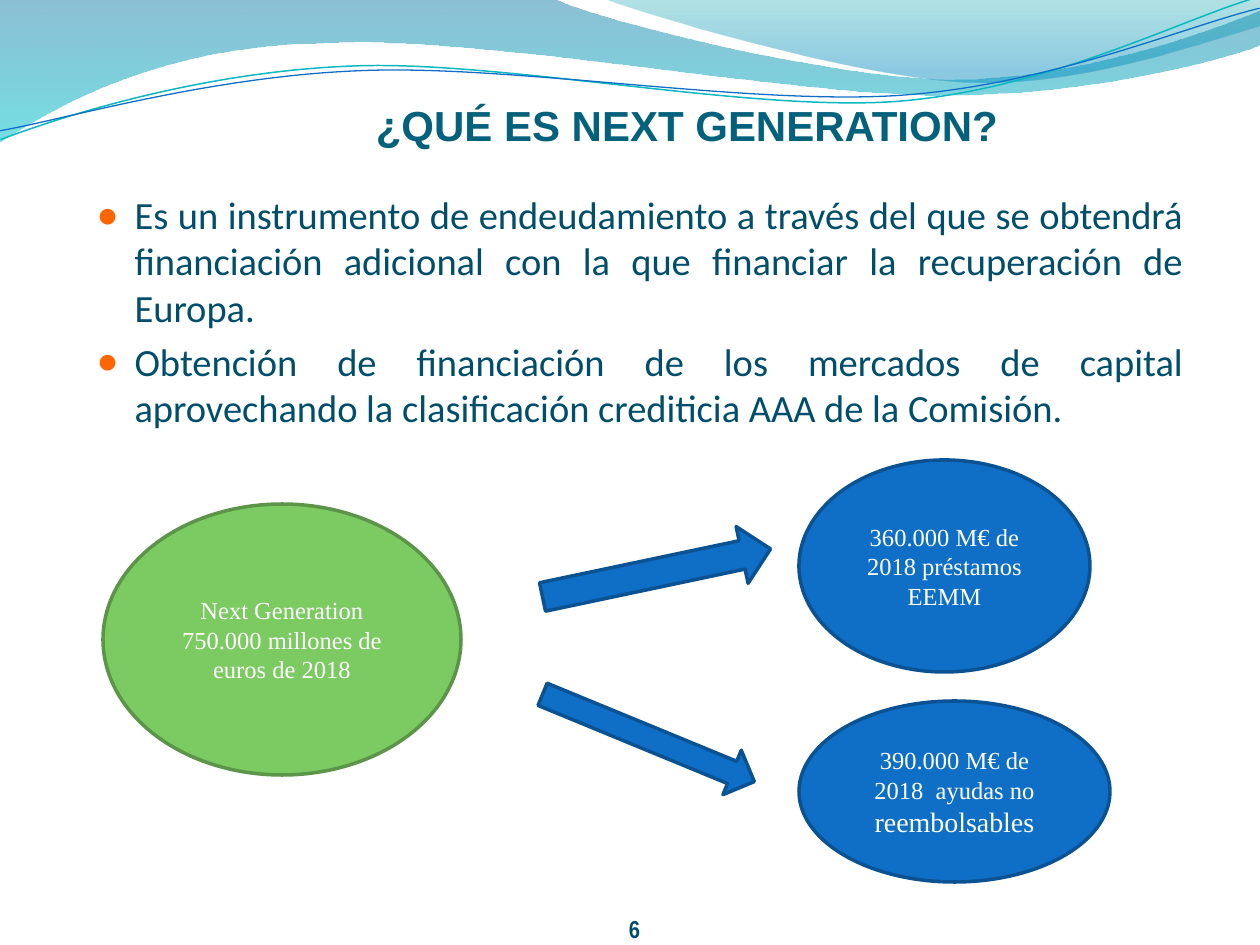
from lxml.etree import SubElement
from pptx import Presentation
from pptx.dml.color import RGBColor
from pptx.enum.shapes import MSO_SHAPE as Shape
from pptx.enum.text import MSO_ANCHOR as Anchor, MSO_AUTO_SIZE as AutoSize, PP_ALIGN as Align
from pptx.oxml.ns import qn
from pptx.util import Pt

EMU_PER_PX = 914400 / 126
COLORS = {
    "title": "04617B", "text": "004E6C", "bullet": "FF6600", "white": "FFFFFF",
    "green": "7CCA62", "green_line": "5C9549",
    "blue": "0F6FC6", "blue_line": "0B5292", "teal_line": "0AB8BF",
    "wave_top": "0074A1", "wave_bottom": "00C6CF",
    "crest_top": "00A1A9", "crest_bottom": "008BBF",
}


def px(*values):
    return [round(value * EMU_PER_PX) for value in values]


def style_runs(paragraph, font_name, size, color, bold=False):
    for run in paragraph.runs:
        run.font.name = font_name
        run.font.size = Pt(size)
        run.font.bold = bold
        run.font.color.rgb = RGBColor.from_string(COLORS[color])


presentation = Presentation()
presentation.slide_width, presentation.slide_height = px(1260, 945)
slide = presentation.slides.add_slide(presentation.slide_layouts[1])
shapes = slide.shapes
title, body = slide.placeholders

waves = [
    ((0, 0), [
        [(554, -1)],
        [(600, 21), (837, 79), (955, 79)],
        [(1074, 79), (1207, 33), (1260, 11)],
        [(1261, 45)],
        [(1239, 55), (1096, 96), (940, 95)],
        [(784, 95), (481, 35), (324, 43)],
        [(163, 45), (58, 105), (-1, 142)],
        [(0, 0)],
    ], [("wave_top", 0, 45), ("wave_bottom", 1, 55)], None),
    ((604, -1), [
        [(641, 14), (859, 78), (969, 82)],
        [(1079, 87), (1211, 40), (1260, 26)],
        [(1260, 0)],
        [(604, -1)],
    ], [("crest_top", 0, 30), ("crest_bottom", 0.8, 45)], None),
    ((-2, 110), [
        [(59, 90), (200, 52), (350, 53)],
        [(499, 53), (745, 118), (896, 114)],
        [(1048, 109), (1184, 45), (1260, 27)],
    ], None, ("teal_line", 0.85)),
    ((-2, 101), [
        [(57, 94), (207, 57), (358, 58)],
        [(509, 58), (750, 112), (902, 108)],
        [(1052, 104), (1188, 52), (1262, 38)],
    ], None, ("blue", 0.75)),
]
for start, segments, gradient, outline in waves:
    builder = shapes.build_freeform(*px(*start))
    builder.add_line_segments(
        [px(*point) for segment in segments for point in segment], close=gradient is not None)
    wave = builder.convert_to_shape()
    wave.shadow.inherit = False
    edges = iter(list(wave._element.iter(qn("a:lnTo"))))
    for segment in segments:
        edge = next(edges)
        if len(segment) == 3:
            edge.tag = qn("a:cubicBezTo")
            for extra in (next(edges), next(edges)):
                edge.append(extra[0])
                extra.getparent().remove(extra)
    if gradient:
        wave.line.fill.background()
        wave.fill.gradient()
        wave.fill.gradient_angle = 270
        for stop, (color, position, opacity) in zip(wave.fill.gradient_stops, gradient):
            stop.position = position
            stop.color.rgb = RGBColor.from_string(COLORS[color])
        color_elements = wave._element.spPr.iter(qn("a:srgbClr"))
        for element, (color, position, opacity) in zip(color_elements, gradient):
            SubElement(element, qn("a:alpha"), val=str(opacity * 1000))
    else:
        color, width = outline
        wave.rotation = 357.3
        wave.fill.background()
        wave.line.color.rgb = RGBColor.from_string(COLORS[color])
        wave.line.width = Pt(width)

page_number = shapes.add_textbox(*px(581, 904, 59, 39))
title.left, title.top, title.width, title.height = px(224, 86, 926, 78)
labels = [
    (page_number, "6", Anchor.BOTTOM, Align.RIGHT, "Arial Narrow", 14, "text"),
    (title, "¿QUÉ ES NEXT GENERATION?", Anchor.MIDDLE, Align.CENTER, "Arial", 24, "title"),
]
for label, text, anchor, alignment, font_name, size, color in labels:
    frame = label.text_frame
    frame.text = text
    frame.word_wrap = True
    frame.auto_size = AutoSize.NONE
    frame.vertical_anchor = anchor
    frame.margin_left = frame.margin_top = frame.margin_right = frame.margin_bottom = 0
    frame.paragraphs[0].alignment = alignment
    style_runs(frame.paragraphs[0], font_name, size, color, bold=True)

shapes._spTree.append(body._element)
body.left, body.top, body.width, body.height = px(84, 185, 1112, 466)
body.text_frame.text = (
    "Es un instrumento de endeudamiento a través del que se obtendrá financiación "
    "adicional con la que financiar la recuperación de Europa.\n"
    "Obtención de financiación de los mercados de capital aprovechando la "
    "clasificación crediticia AAA de la Comisión."
)
body.text_frame.auto_size = AutoSize.NONE
indent = px(38)[0]
for index, paragraph in enumerate(body.text_frame.paragraphs):
    paragraph.alignment = Align.JUSTIFY
    paragraph.space_before = Pt(4.4 if index else 0)
    properties = paragraph._p.get_or_add_pPr()
    properties.set("marL", str(indent))
    properties.set("indent", str(-indent))
    bullet_color = SubElement(properties, qn("a:buClr"))
    SubElement(bullet_color, qn("a:srgbClr"), val=COLORS["bullet"])
    SubElement(properties, qn("a:buSzPct"), val="95000")
    SubElement(properties, qn("a:buChar"), char="●")
    style_runs(paragraph, "Calibri", 22, "text")

diagram = [
    (Shape.OVAL, (103, 504, 358, 271), 0, "green",
     "Next Generation\n750.000 millones de euros de 2018"),
    (Shape.OVAL, (799, 460, 291, 212), 0, "blue", "360.000 M€ de 2018 préstamos EEMM"),
    (Shape.OVAL, (799, 701, 311, 181), 0, "blue", "390.000 M€ de 2018  ayudas no "),
    (Shape.RIGHT_ARROW, (540, 544, 233, 58), 348.1, "blue", ""),
    (Shape.RIGHT_ARROW, (534, 714, 229, 48), 22.4, "blue", ""),
]
for preset, box, rotation, color, text in diagram:
    shape = shapes.add_shape(preset, *px(*box))
    shape.rotation = rotation
    shape.shadow.inherit = False
    shape.fill.solid()
    shape.fill.fore_color.rgb = RGBColor.from_string(COLORS[color])
    shape.line.color.rgb = RGBColor.from_string(COLORS[color + "_line"])
    shape.line.width = Pt(2)
    if not text:
        continue
    frame = shape.text_frame
    frame.text = text
    frame.word_wrap = True
    frame.vertical_anchor = Anchor.MIDDLE
    if "ayudas" in text:
        frame.paragraphs[0].add_run().text = "reembolsables"
    for paragraph in frame.paragraphs:
        paragraph.alignment = Align.CENTER
        style_runs(paragraph, "Times New Roman", 14, "white")
        for run in paragraph.runs[1:]:
            run.font.size = Pt(16)

shapes._spTree.append(title._element)
presentation.save("out.pptx")
